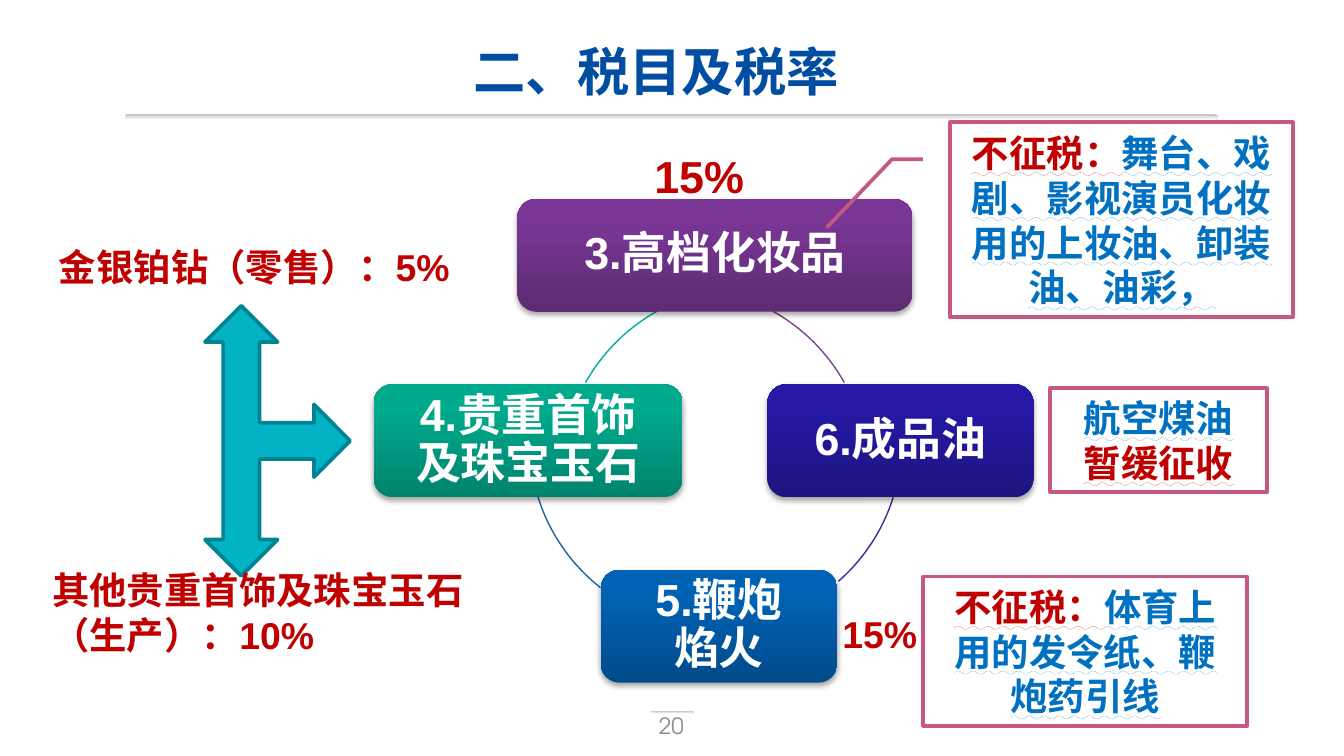
import pptx
import pptx.util
import pptx.dml.color
import pptx.enum.shapes
import pptx.enum.text
import pptx.oxml
import pptx.oxml.ns

PX = 9144  # 100 px to the inch
RGB = pptx.dml.color.RGBColor
KIND = pptx.enum.shapes.MSO_SHAPE
ALIGN = pptx.enum.text.PP_ALIGN
ANCHOR = pptx.enum.text.MSO_ANCHOR
WAVY = pptx.enum.text.MSO_UNDERLINE.WAVY_LINE
Pt = pptx.util.Pt
HAN = "Noto Sans CJK SC"

WHITE = RGB(0xFF, 0xFF, 0xFF)
SILVER = RGB(0xBF, 0xBF, 0xBF)
GREY = RGB(0x8C, 0x8C, 0x8C)
NAVY = RGB(0x00, 0x4D, 0xA1)
RED = RGB(0xC0, 0x00, 0x00)
BLUE = RGB(0x00, 0x70, 0xC0)
PINK = RGB(0xC6, 0x58, 0x85)
CYAN = RGB(0x01, 0xB3, 0xC5)
TEAL = RGB(0x01, 0x84, 0x92)
PLUM = RGB(0x5C, 0x2B, 0x71), RGB(0x79, 0x36, 0x95), RGB(0x77, 0x44, 0x8C)
INDIGO = RGB(0x1D, 0x14, 0x7F), RGB(0x25, 0x19, 0xA5), RGB(0x34, 0x2B, 0x9A)
AZURE = RGB(0x00, 0x4B, 0x8B), RGB(0x00, 0x62, 0xB4), RGB(0x14, 0x63, 0xA6)
GREEN = RGB(0x00, 0x83, 0x6D), RGB(0x00, 0xAA, 0x8D), RGB(0x00, 0xAF, 0x92)

SHADOW = (
    '<a:effectLst %s><a:outerShdw blurRad="39370" dist="22860" dir="5400000" '
    'rotWithShape="0"><a:srgbClr val="000000"><a:alpha val="35000"/></a:srgbClr>'
    "</a:outerShdw></a:effectLst>" % pptx.oxml.ns.nsdecls("a")
)

deck = pptx.Presentation()
deck.slide_width = 1000 * PX
deck.slide_height = pptx.util.Inches(5.625)
slide = deck.slides.add_slide(deck.slide_layouts[5])
shapes = slide.shapes


def add(kind, *place):
    """Add a preset shape without shadow at a place given in px."""
    shape = shapes.add_shape(kind, *[n * PX for n in place])
    shape.shadow.inherit = False
    return shape


def write(shape, lines, size, align=ALIGN.LEFT, face="Arial", bold=True, wave=None):
    """Fill a shape with lines, each a list of (words, colour) runs."""
    frame = shape.text_frame
    frame.word_wrap = True
    for i, line in enumerate(lines):
        para = frame.add_paragraph() if i else frame.paragraphs[0]
        para.alignment = align
        font = para.font
        font.size, font.bold, font.name = Pt(size), bold, face
        font.underline = wave
        font.color.rgb = line[0][1]
        han = pptx.oxml.parse_xml(
            '<a:ea %s typeface="%s"/>' % (pptx.oxml.ns.nsdecls("a"), HAN))
        para._p.pPr.find(pptx.oxml.ns.qn("a:defRPr")).append(han)
        for words, tint in line:
            run = para.add_run()
            run.text = words
            if len(line) > 1:
                run.font.color.rgb = tint
    return frame


# Rules under the title and above the page number
for place in [(93, 85, 813, 4), (484, 529, 32, 2)]:
    rule = add(KIND.ROUNDED_RECTANGLE, *place)
    rule.adjustments[0] = 0.5
    rule.line.fill.background()
    rule.fill.gradient()
    rule.fill.gradient_angle = 270
    for stop, tint in zip(rule.fill.gradient_stops, (SILVER, WHITE)):
        stop.color.rgb = tint

# Title and page number
title = shapes.title
title.left, title.top, title.width, title.height = [n * PX for n in (90, 25, 796, 55)]
page = shapes.add_textbox(383 * PX, 525 * PX, 233 * PX, 30 * PX)
for frame in [
    write(title, [[("二、税目及税率", NAVY)]], 28, ALIGN.CENTER, HAN),
    write(page, [[("20", GREY)]], 12, ALIGN.CENTER, "TeX Gyre Adventor", False),
]:
    frame.vertical_anchor = ANCHOR.MIDDLE
    frame.margin_left = frame.margin_right = 7 * PX
    frame.margin_top = frame.margin_bottom = 4 * PX

# Arcs of the cycle: left, top, start and end angle, colour
for x, y, start, end, tint in [
    (369, 214, 299.3, 330.7, PLUM[2]),
    (394, 190, 17.5, 48.8, INDIGO[2]),
    (394, 190, 128.2, 162.6, AZURE[2]),
    (418, 214, 209.3, 241.1, GREEN[2]),
]:
    arc = add(KIND.ARC, x, y, 277, 277)
    arc.adjustments[0] = start * 0.6  # 60000ths of a degree per 100000
    arc.adjustments[1] = end * 0.6
    arc.fill.background()
    arc.line.color.rgb = tint
    arc.line.width = Pt(0.75)

# Tax items around the cycle
for x, y, w, tints, lines in [
    (385, 148, 294, PLUM, ["3.高档化妆品"]),
    (571, 286, 198, INDIGO, ["6.成品油"]),
    (447, 424, 176, AZURE, ["5.鞭炮", "焰火"]),
    (278, 286, 230, GREEN, ["4.贵重首饰及珠宝玉石"]),
]:
    item = shapes.add_shape(KIND.ROUNDED_RECTANGLE, x * PX, y * PX, w * PX, 84 * PX)
    item.line.fill.background()
    item.fill.gradient()
    item.fill.gradient_angle = 90
    for stop, tint, spot in zip(item.fill.gradient_stops, tints, (0, 0.8)):
        stop.color.rgb = tint
        stop.position = spot
    item._element.spPr.append(pptx.oxml.parse_xml(SHADOW))
    frame = write(item, [[(words, WHITE)] for words in lines], 24, ALIGN.CENTER)
    frame.vertical_anchor = ANCHOR.MIDDLE
    frame.margin_left = frame.margin_right = 14 * PX
    frame.margin_top = frame.margin_bottom = 14 * PX
    for para in frame.paragraphs:
        para.line_spacing = 0.9

# Three-way arrow splitting the jewellery rates
arrow = add(KIND.LEFT_RIGHT_UP_ARROW, 106, 274, 201, 108)
arrow.rotation = 90
arrow.fill.solid()
arrow.fill.fore_color.rgb = CYAN
arrow.line.color.rgb = TEAL
arrow.line.width = Pt(2)

# Rates
for x, y, w, h, size, words in [
    (34, 177, 345, 44, 20, "金银铂钻（零售）：5%"),
    (29, 417, 345, 77, 20, "其他贵重首饰及珠宝玉石（生产）：10%"),
    (617, 450, 90, 44, 20, "15%"),
    (477, 106, 246, 50, 24, "15%"),
]:
    rate = shapes.add_textbox(x * PX, y * PX, w * PX, h * PX)
    write(rate, [[(words, RED)]], size)

# Framed notes on exemptions
for kind, place, lines in [
    (KIND.LINE_CALLOUT_2, (707, 91, 255, 145),
     [[("不征税：", RED), ("舞台、戏剧、影视演员化妆用的上妆油、卸装油、油彩，", BLUE)]]),
    (KIND.RECTANGLE, (687, 429, 241, 111),
     [[("不征税：", RED), ("体育上用的发令纸、鞭炮药引线", BLUE)]]),
    (KIND.RECTANGLE, (781, 289, 162, 77),
     [[("航空煤油", BLUE)], [("暂缓征收", RED)]]),
]:
    note = add(kind, *place)
    note.fill.solid()
    note.fill.fore_color.rgb = WHITE
    note.line.color.rgb = PINK
    note.line.width = Pt(2)
    frame = write(note, lines, 20, ALIGN.CENTER, wave=WAVY)
    frame.vertical_anchor = ANCHOR.MIDDLE
    if kind == KIND.LINE_CALLOUT_2:
        for i, ratio in enumerate((0.19, -0.08, 0.19, -0.17, 0.54, -0.36)):
            note.adjustments[i] = ratio

deck.save("out.pptx")
